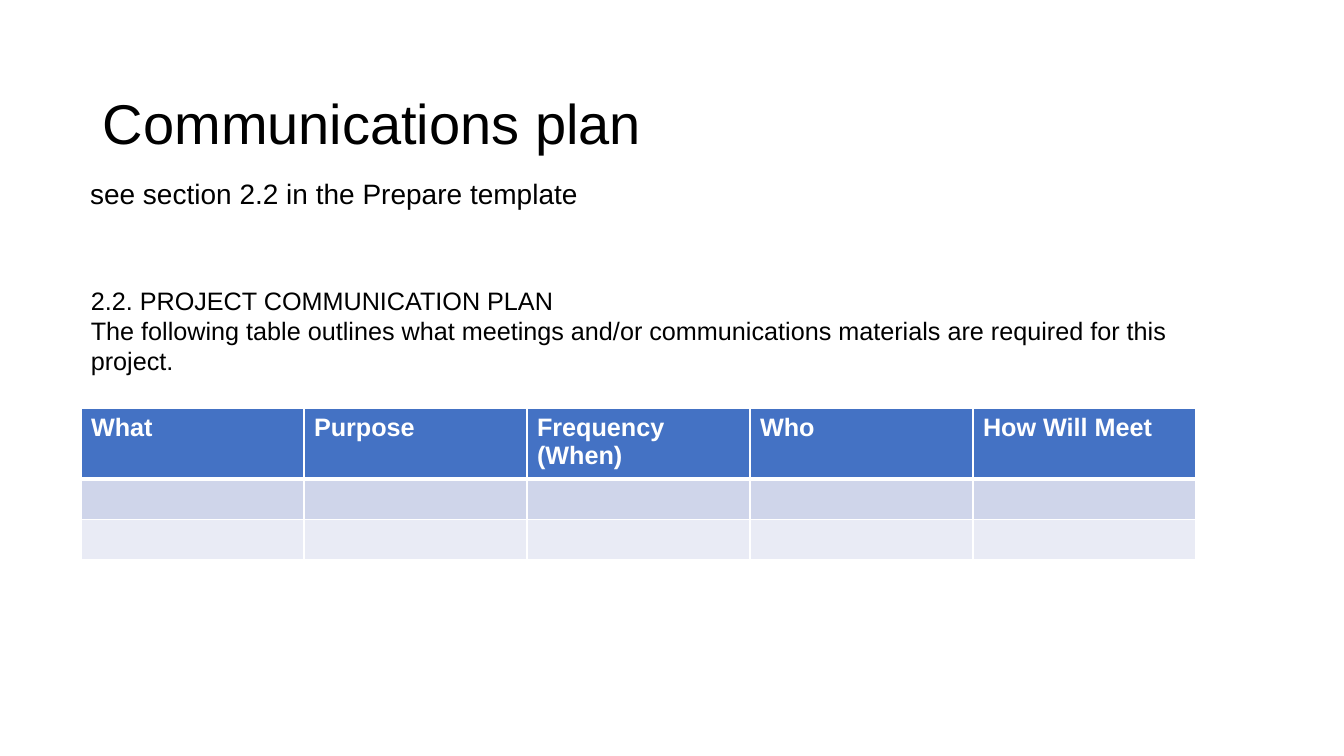
import pptx
import pptx.util
import pptx.dml.color
import pptx.enum.text
import pptx.oxml
import pptx.oxml.ns
from pptx.util import Cm, Pt
from pptx.dml.color import RGBColor

TITLE = "Communications plan"
REFERENCE = "see section 2.2 in the Prepare template"
INTRODUCTION = [
    "2.2. PROJECT COMMUNICATION PLAN",
    "The following table outlines what meetings and/or communications "
    "materials are required for this project.",
]
HEADINGS = ["What", "Purpose", "Frequency (When)", "Who", "How Will Meet"]
EMPTY_ROWS = 2

FONT = "Arial"
BLACK = RGBColor(0x00, 0x00, 0x00)
WHITE = RGBColor(0xFF, 0xFF, 0xFF)
HEADER_BLUE = RGBColor(0x44, 0x72, 0xC4)
BANDS = [RGBColor(0xCF, 0xD5, 0xEA), RGBColor(0xE9, 0xEB, 0xF5)]

TEXT_WIDTH = Cm(28.02)
TABLE_LEFT = Cm(2.04)
COLUMN_WIDTH = Cm(5.62)
HEADER_HEIGHT = Cm(1.75)
ROW_HEIGHT = Cm(1.02)


def write(text_frame, lines, size, color=BLACK, bold=False, line_spacing=None):
    text_frame.word_wrap = True
    text_frame.text = "\n".join(lines)
    for paragraph in text_frame.paragraphs:
        paragraph.alignment = pptx.enum.text.PP_ALIGN.LEFT
        paragraph.line_spacing = line_spacing
        for run in paragraph.runs:
            run.font.name = FONT
            run.font.size = Pt(size)
            run.font.bold = bold
            run.font.color.rgb = color


def set_borders(cell, widths):
    properties = cell._tc.get_or_add_tcPr()
    for position, (side, width) in enumerate(widths.items()):
        border = pptx.oxml.parse_xml(
            f'<a:ln{side} {pptx.oxml.ns.nsdecls("a")} w="{Pt(width)}">'
            f'<a:solidFill><a:srgbClr val="{WHITE}"/></a:solidFill></a:ln{side}>'
        )
        properties.insert(position, border)


def add_plan_table(slide):
    row_count = 1 + EMPTY_ROWS
    table = slide.shapes.add_table(
        row_count, len(HEADINGS), TABLE_LEFT, Cm(10.29),
        COLUMN_WIDTH * len(HEADINGS), HEADER_HEIGHT + ROW_HEIGHT * EMPTY_ROWS,
    ).table
    for column in table.columns:
        column.width = COLUMN_WIDTH
    for row_index, row in enumerate(table.rows):
        is_header = row_index == 0
        row.height = HEADER_HEIGHT if is_header else ROW_HEIGHT
        fill = HEADER_BLUE if is_header else BANDS[(row_index - 1) % len(BANDS)]
        top = 3 if row_index == 1 else 1
        bottom = 3 if is_header else 1
        for column_index, cell in enumerate(row.cells):
            cell.fill.solid()
            cell.fill.fore_color.rgb = fill
            set_borders(cell, {"L": 1, "R": 1, "T": top, "B": bottom})
            if is_header:
                write(cell.text_frame, [HEADINGS[column_index]], 18, WHITE, True)


def main():
    presentation = pptx.Presentation()
    presentation.slide_width = Cm(33.87)
    presentation.slide_height = Cm(19.05)
    slide = presentation.slides.add_slide(presentation.slide_layouts[5])

    title = slide.shapes.title
    title.left, title.top, title.width, title.height = (
        Cm(2.34), Cm(1.02), TEXT_WIDTH, Cm(4.34))
    title.text_frame.vertical_anchor = pptx.enum.text.MSO_ANCHOR.MIDDLE
    write(title.text_frame, [TITLE], 40, line_spacing=0.9)

    reference = slide.shapes.add_textbox(Cm(2.02), Cm(4.42), TEXT_WIDTH, Cm(10.19))
    write(reference.text_frame, [REFERENCE], 20, line_spacing=0.9)

    introduction = slide.shapes.add_textbox(TABLE_LEFT, Cm(7.06), TEXT_WIDTH, Cm(2.57))
    write(introduction.text_frame, INTRODUCTION, 18)

    add_plan_table(slide)
    presentation.save("out.pptx")


if __name__ == "__main__":
    main()
